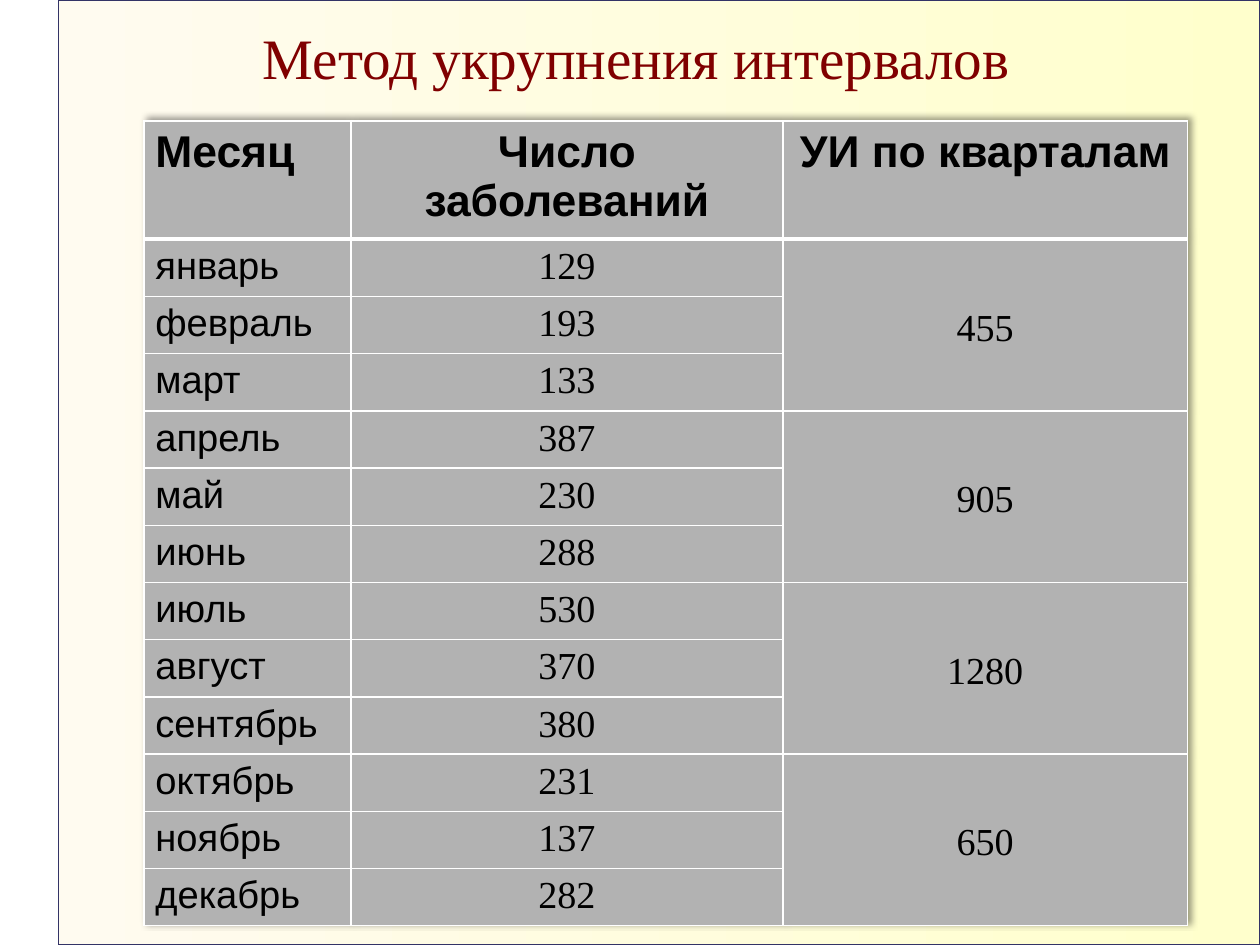
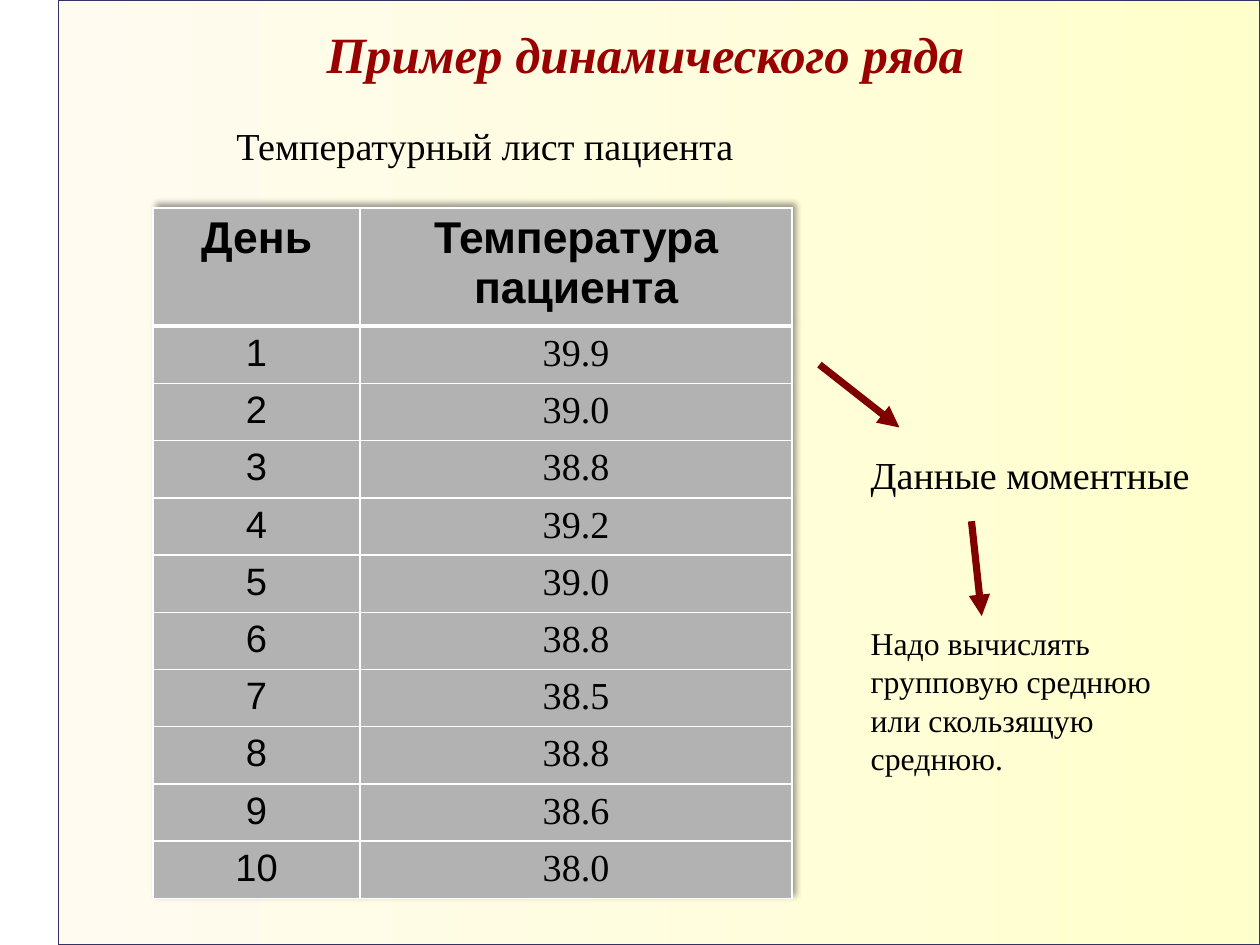
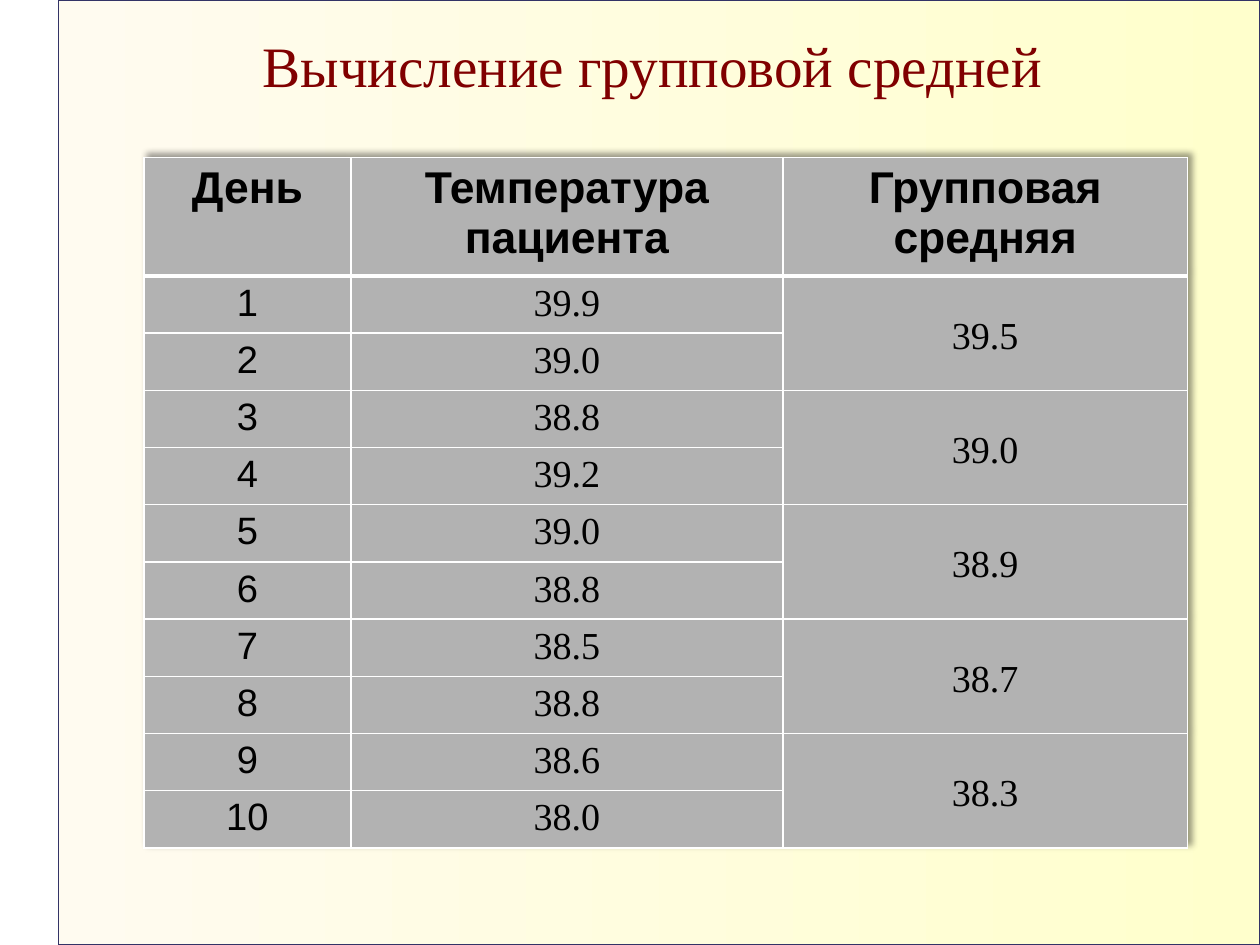
from dataclasses import dataclass

from pptx import Presentation
from pptx.dml.color import RGBColor
from pptx.enum.shapes import MSO_CONNECTOR, MSO_SHAPE
from pptx.enum.text import MSO_ANCHOR, PP_ALIGN
from pptx.oxml import parse_xml
from pptx.oxml.ns import nsdecls
from pptx.slide import Slide
from pptx.table import _Cell
from pptx.text.text import TextFrame
from pptx.util import Emu, Inches, Pt

LEFT, CENTER = PP_ALIGN.LEFT, PP_ALIGN.CENTER
TOP, MIDDLE = MSO_ANCHOR.TOP, MSO_ANCHOR.MIDDLE


@dataclass(frozen=True)
class Theme:
    serif: str = "Times New Roman"
    sans: str = "Arial"
    title: str = "800000"
    accent_title: str = "990000"
    text: str = "000000"
    arrow: str = "800000"
    panel_start: str = "FFFBF0"
    panel_end: str = "FFFFCC"
    panel_line: str = "333366"
    cell: str = "B2B2B2"
    border: str = "FFFFFF"
    title_size: int = 36
    accent_title_size: int = 32
    header_size: int = 28
    body_size: int = 24
    note_size: int = 20
    tight: float = 0.93
    loose: float = 1.15


@dataclass(frozen=True)
class TableSpec:
    left: float
    top: float
    headers: list[str]
    labels: list[str]
    values: list[str]
    groups: list[str]
    label_align: PP_ALIGN = CENTER


T = Theme()
# A 28 by 21 cm page, in whole EMU
SLIDE_W, SLIDE_H = Emu(10080625), Emu(7559675)
PANEL_LEFT = Inches(0.51)
COLUMN_WIDTHS = [1.81, 3.78, 3.54]
HEADER_H, ROW_H = 1.03, 0.5

MONTHS = ["январь", "февраль", "март", "апрель", "май", "июнь", "июль",
          "август", "сентябрь", "октябрь", "ноябрь", "декабрь"]
CASES = ["129", "193", "133", "387", "230", "288",
         "530", "370", "380", "231", "137", "282"]
QUARTERS = ["455", "905", "1280", "650"]
DAYS = [str(day) for day in range(1, 11)]
TEMPERATURES = ["39.9", "39.0", "38.8", "39.2", "39.0",
                "38.8", "38.5", "38.8", "38.6", "38.0"]
GROUP_MEANS = ["39.5", "39.0", "38.9", "38.7", "38.3"]
DAY_HEADERS = ["День", "Температура пациента"]


def rgb(color: str) -> RGBColor:
    return RGBColor.from_string(color)


def write(tf: TextFrame, text: str, *, size: int, font: str = T.serif,
          color: str = T.text, bold: bool = False, italic: bool = False,
          align: PP_ALIGN = LEFT, spacing: float = 1.0, after: int = 0) -> None:
    p = tf.paragraphs[0]
    p.alignment, p.line_spacing, p.space_after = align, spacing, Pt(after)
    r = p.add_run()
    r.text = text
    f = r.font
    f.name, f.size, f.bold, f.italic = font, Pt(size), bold, italic
    f.color.rgb = rgb(color)


def add_text(s: Slide, text: str, left: float, top: float, width: float,
             height: float, *, wrap: bool = True, **style) -> None:
    tf = s.shapes.add_textbox(Inches(left), Inches(top),
                              Inches(width), Inches(height)).text_frame
    tf.word_wrap = wrap
    write(tf, text, **style)


def add_title(s: Slide, text: str, top: float) -> None:
    add_text(s, text, 2.2, top, 7.09, 0.66, size=T.title_size,
             color=T.title, spacing=T.tight)


def add_panel_slide(prs: Presentation) -> Slide:
    """Add a blank slide with the shared gradient panel."""
    s = prs.slides.add_slide(prs.slide_layouts[6])
    panel = s.shapes.add_shape(MSO_SHAPE.RECTANGLE, PANEL_LEFT, 0,
                               SLIDE_W - PANEL_LEFT, SLIDE_H)
    panel.shadow.inherit = False
    panel.fill.gradient()
    panel.fill.gradient_angle = 0
    for stop, color in zip(panel.fill.gradient_stops, (T.panel_start, T.panel_end)):
        stop.color.rgb = rgb(color)
    panel.line.color.rgb = rgb(T.panel_line)
    panel.line.width = Pt(0.75)
    return s


def add_arrow(s: Slide, x1: float, y1: float, x2: float, y2: float) -> None:
    arrow = s.shapes.add_connector(MSO_CONNECTOR.STRAIGHT, Inches(x1), Inches(y1),
                                   Inches(x2), Inches(y2))
    arrow.line.color.rgb = rgb(T.arrow)
    arrow.line.width = Pt(4.5)
    arrow.line._get_or_add_ln().append(
        parse_xml(f'<a:tailEnd {nsdecls("a")} type="triangle"/>'))
    arrow._element.spPr.append(parse_xml(f'<a:effectLst {nsdecls("a")}/>'))


def style_cell(cell: _Cell, bottom: int = 1) -> None:
    """Give a cell its borders (points) and its fill."""
    tc_pr = cell._tc.get_or_add_tcPr()
    for side, width in (("L", 1), ("R", 1), ("T", 1), ("B", bottom)):
        tc_pr.append(parse_xml(
            f'<a:ln{side} {nsdecls("a")} w="{Pt(width)}"><a:solidFill>'
            f'<a:srgbClr val="{T.border}"/></a:solidFill></a:ln{side}>'))
    cell.fill.solid()
    cell.fill.fore_color.rgb = rgb(T.cell)


def write_value(cell: _Cell, text: str, anchor: MSO_ANCHOR = TOP) -> None:
    cell.margin_left = cell.margin_right = Inches(0.07)
    cell.margin_top = cell.margin_bottom = 0
    cell.vertical_anchor = anchor
    write(cell.text_frame, text, size=T.body_size, align=CENTER,
          spacing=T.loose, after=10)


def add_data_table(s: Slide, spec: TableSpec) -> None:
    """Draw labels and values, with group results in merged cells."""
    widths = COLUMN_WIDTHS[:len(spec.headers)]
    count = len(spec.labels)
    table = s.shapes.add_table(
        count + 1, len(widths), Inches(spec.left), Inches(spec.top),
        Inches(sum(widths)), Inches(HEADER_H + ROW_H * count)).table
    table._tbl.tblPr.insert(0, parse_xml(
        f'<a:effectLst {nsdecls("a")}><a:outerShdw blurRad="50800" dist="38100" '
        'dir="18900000" algn="bl" rotWithShape="0"><a:srgbClr val="000000">'
        '<a:alpha val="40000"/></a:srgbClr></a:outerShdw></a:effectLst>'))
    for column, width in zip(table.columns, widths):
        column.width = Inches(width)
    for i, row in enumerate(table.rows):
        row.height = Inches(ROW_H if i else HEADER_H)
        for cell in row.cells:
            style_cell(cell, bottom=1 if i else 3)

    for col, header in enumerate(spec.headers):
        write(table.cell(0, col).text_frame, header, size=T.header_size, font=T.sans,
              bold=True, align=CENTER if col else spec.label_align)
    for i, (label, value) in enumerate(zip(spec.labels, spec.values), start=1):
        write(table.cell(i, 0).text_frame, label, size=T.body_size, font=T.sans,
              align=spec.label_align)
        write_value(table.cell(i, 1), value)
    for i, result in enumerate(spec.groups):
        span = count // len(spec.groups)
        first = table.cell(1 + i * span, 2)
        first.merge(table.cell((i + 1) * span, 2))
        write_value(first, result, MIDDLE)


def build_intervals(prs: Presentation) -> None:
    s = add_panel_slide(prs)
    add_title(s, "Метод укрупнения интервалов", 0.2)
    add_data_table(s, TableSpec(
        1.26, 1.06, ["Месяц", "Число заболеваний", "УИ по кварталам"],
        MONTHS, CASES, QUARTERS, label_align=LEFT))


def build_series(prs: Presentation) -> None:
    s = add_panel_slide(prs)
    add_text(s, "Пример динамического ряда", 2.76, 0.2, 5.83, 0.6, wrap=False,
             size=T.accent_title_size, color=T.accent_title, bold=True,
             italic=True, spacing=T.tight)
    add_text(s, "Температурный лист пациента", 1.97, 1.02, 7.95, 0.81,
             size=T.body_size)
    add_data_table(s, TableSpec(1.34, 1.82, DAY_HEADERS, DAYS, TEMPERATURES, []))
    add_arrow(s, 7.17, 3.19, 7.87, 3.74)
    add_text(s, "Данные моментные", 7.52, 3.9, 3.07, 0.81, size=T.body_size)
    add_arrow(s, 8.5, 4.56, 8.59, 5.39)
    add_text(s, "Надо вычислять групповую среднюю или скользящую среднюю.",
             7.52, 5.41, 3.07, 1.75, size=T.note_size)


def build_group_means(prs: Presentation) -> None:
    s = add_panel_slide(prs)
    add_title(s, "Вычисление групповой средней", 0.27)
    add_data_table(s, TableSpec(
        1.26, 1.38, DAY_HEADERS + ["Групповая средняя"],
        DAYS, TEMPERATURES, GROUP_MEANS))


def main() -> None:
    prs = Presentation()
    prs.slide_width, prs.slide_height = SLIDE_W, SLIDE_H
    for build in (build_intervals, build_series, build_group_means):
        build(prs)
    prs.save("out.pptx")


if __name__ == "__main__":
    main()
